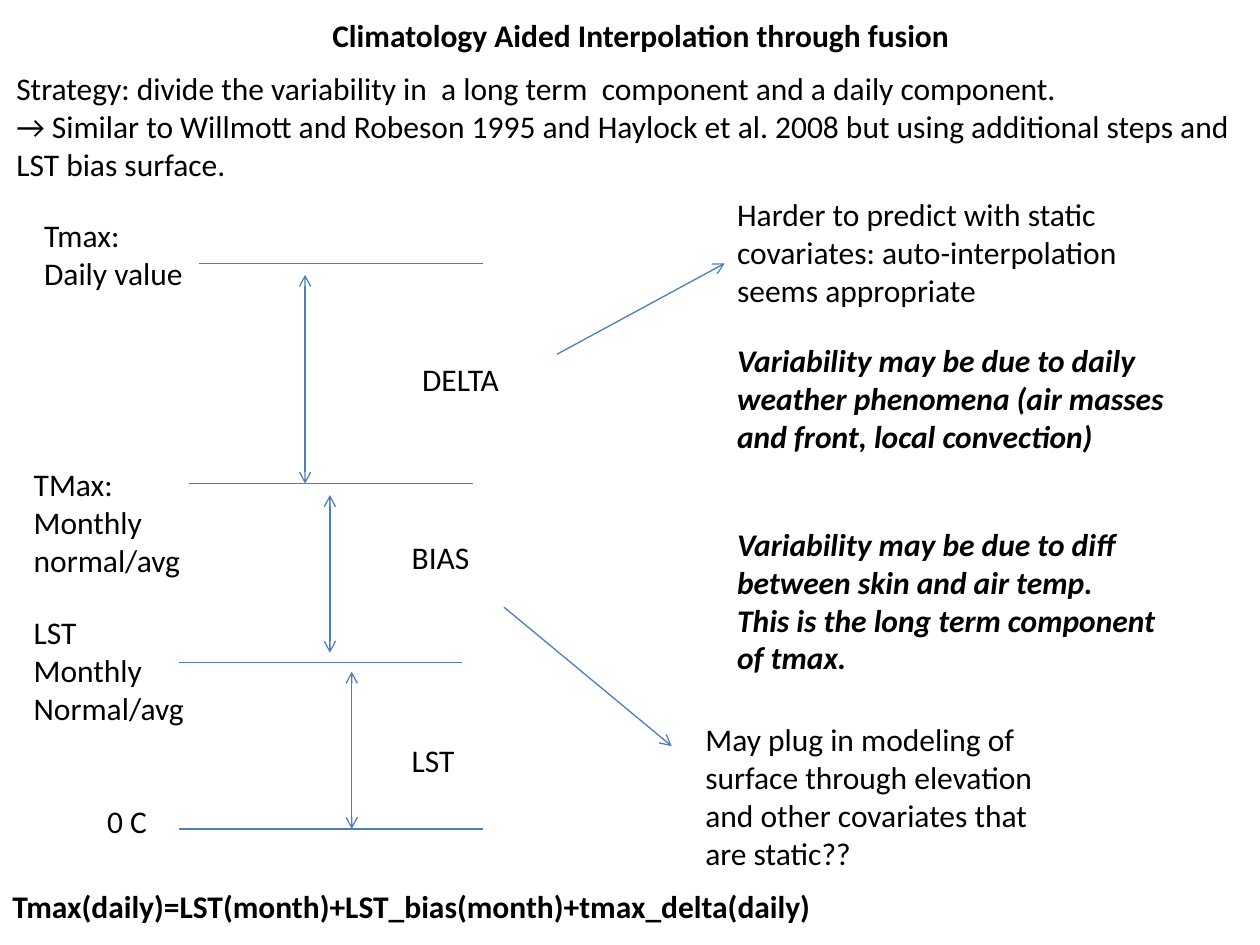
from lxml import etree
from pptx import Presentation
from pptx.dml.color import RGBColor
from pptx.enum.shapes import MSO_CONNECTOR
from pptx.enum.text import MSO_AUTO_SIZE
from pptx.oxml.ns import qn
from pptx.util import Cm, Pt

STRAIGHT = MSO_CONNECTOR.STRAIGHT
FIT_SHAPE = MSO_AUTO_SIZE.SHAPE_TO_FIT_TEXT
BLACK = RGBColor(0x00, 0x00, 0x00)
BLUE = RGBColor(0x4B, 0x7E, 0xBC)

LABELS = [
    (0.64, 4.24, 3.61, 1.8, ["Tmax:", "Daily value"]),
    (0.43, 9.25, 3.61, 2.57, ["TMax:", "Monthly normal/avg"]),
    (0.43, 12.24, 3.61, 2.57, ["LST Monthly", "Normal/avg"]),
    (1.91, 16.05, 1.7, 1.02, ["0 C"]),
    (8.26, 7.14, 2.54, 1.02, ["DELTA"]),
    (8.05, 10.72, 2.54, 1.02, ["BIAS"]),
    (8.05, 14.81, 2.11, 1.02, ["LST"]),
]
COMMENTS = [
    (14.61, 3.81, 8.33, 2.57,
     ["Harder to predict with static covariates: auto-interpolation seems appropriate"]),
    (13.97, 14.4, 7.42, 3.33,
     ["May plug in modeling of surface through elevation and other covariates that are static??"]),
]
CAUSES = [
    (14.61, 6.76, 9.27, 2.57,
     ["Variability may be due to daily weather phenomena (air masses and front, local convection)"]),
    (14.61, 10.46, 9.27, 3.33,
     ["Variability may be due to diff between skin and air temp.",
      "This is the long term component of tmax."]),
]
STRATEGY = [
    "Strategy: divide the variability in  a long term  component and a daily component.",
    "→ Similar to Willmott and Robeson 1995 and Haylock et al. 2008 but using "
    "additional steps and LST bias surface.",
]
LEVELS = [(4.01, 9.73, 5.31), (3.81, 9.53, 9.75), (3.61, 9.32, 13.36), (3.61, 9.73, 16.71)]
SPANS = [(6.15, 5.54, 9.75), (6.65, 9.98, 13.16), (7.09, 13.54, 16.71)]
POINTERS = [(11.23, 7.14, 14.61, 5.31), (10.16, 12.24, 13.54, 15.04)]


class SlideBuilder:
    font_name = "Calibri"
    font_size = Pt(18)
    line_width = Pt(0.75)

    def __init__(self, slide):
        self.slide = slide

    def text(self, left, top, width, height, lines, bold=False, italic=False):
        shape = self.slide.shapes.add_textbox(Cm(left), Cm(top), Cm(width), Cm(height))
        frame = shape.text_frame
        frame.word_wrap = True
        frame.auto_size = FIT_SHAPE
        frame.text = "\n".join(lines)
        for paragraph in frame.paragraphs:
            font = paragraph.font
            font.name = self.font_name
            font.size = self.font_size
            font.color.rgb = BLACK
            font.bold = bold
            font.italic = italic

    def line(self, x1, y1, x2, y2, arrow_ends=()):
        connector = self.slide.shapes.add_connector(STRAIGHT, Cm(x1), Cm(y1), Cm(x2), Cm(y2))
        connector.line.color.rgb = BLUE
        connector.line.width = self.line_width
        outline = connector.line._get_or_add_ln()
        for end in arrow_ends:
            etree.SubElement(outline, qn(f"a:{end}"), type="arrow")
        etree.SubElement(connector._element.spPr, qn("a:effectLst"))


def main():
    presentation = Presentation()
    presentation.slide_width = Cm(25.4)
    presentation.slide_height = Cm(19.05)
    builder = SlideBuilder(presentation.slides.add_slide(presentation.slide_layouts[6]))

    builder.text(6.45, 0.2, 13.67, 1.02,
                 ["Climatology Aided Interpolation through fusion"], bold=True)
    builder.text(0.08, 1.27, 25.32, 2.57, STRATEGY)
    for left, right, y in LEVELS:
        builder.line(left, y, right, y)
    for x, top, bottom in SPANS:
        builder.line(x, top, x, bottom, ("headEnd", "tailEnd"))
    for pointer in POINTERS:
        builder.line(*pointer, ("tailEnd",))
    for entry in LABELS + COMMENTS:
        builder.text(*entry)
    for entry in CAUSES:
        builder.text(*entry, bold=True, italic=True)
    builder.text(0, 17.75, 18.77, 1.02,
                 ["Tmax(daily)=LST(month)+LST_bias(month)+tmax_delta(daily)"], bold=True)

    presentation.save("out.pptx")


if __name__ == "__main__":
    main()
